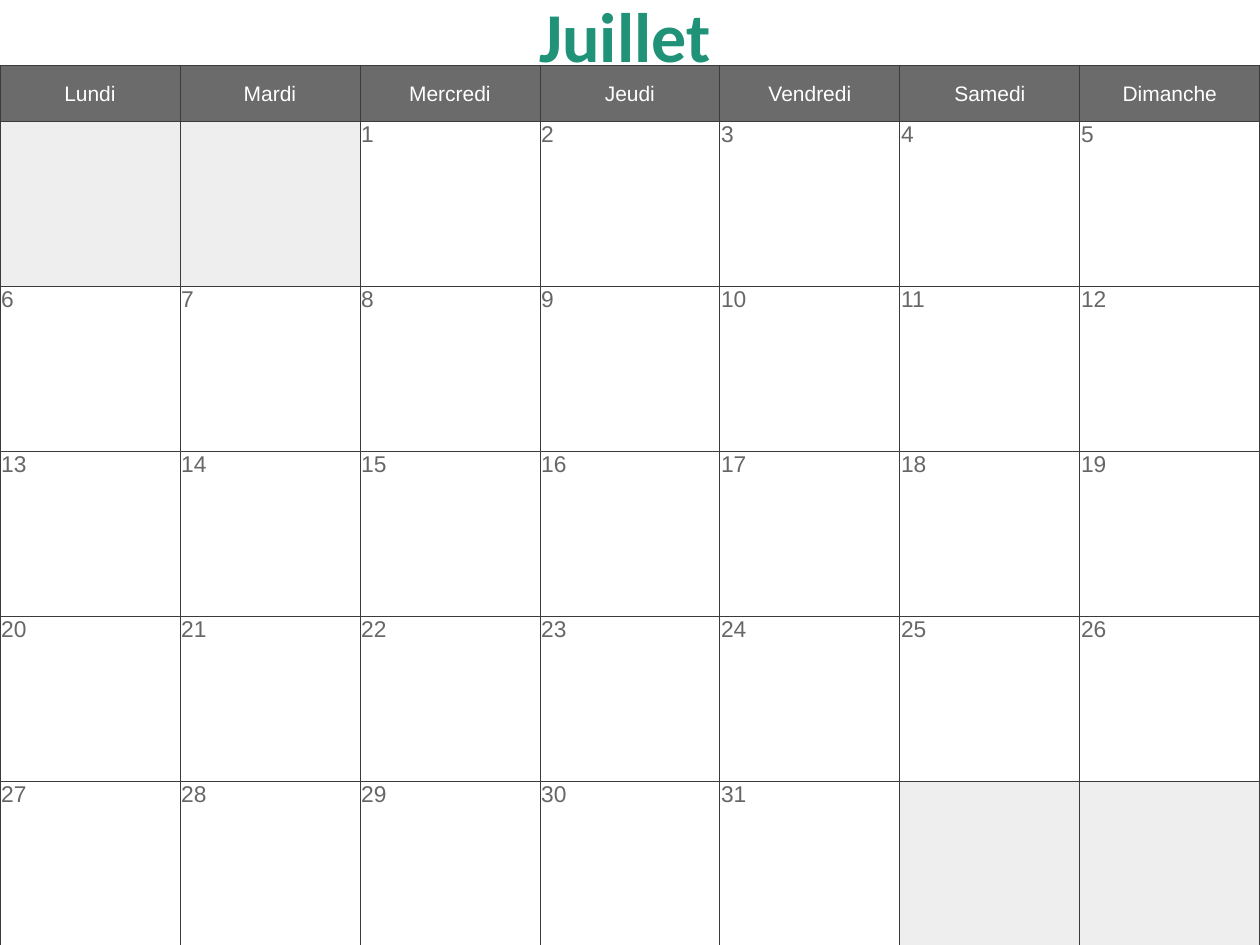
from lxml import etree
from pptx import Presentation
from pptx.dml.color import RGBColor
from pptx.enum.text import MSO_ANCHOR, MSO_AUTO_SIZE, PP_ALIGN
from pptx.oxml.ns import qn
from pptx.util import Inches, Pt

LEFT, CENTER = PP_ALIGN.LEFT, PP_ALIGN.CENTER
TOP, MIDDLE = MSO_ANCHOR.TOP, MSO_ANCHOR.MIDDLE
NO_AUTO_SIZE = MSO_AUTO_SIZE.NONE
TITLE_ONLY = 5

MONTH = "Juillet"
WEEKDAYS = ["Lundi", "Mardi", "Mercredi", "Jeudi", "Vendredi", "Samedi", "Dimanche"]
WEEKS = 5
FIRST_COLUMN = 2  # the month starts on a Wednesday
DAYS = 31

GREEN, WHITE = "209277", "FFFFFF"
HEADER_GREY, DAY_GREY, EMPTY_GREY, BORDER_GREY = "6B6B6B", "676767", "EEEEEE", "3B3B3B"

SLIDE_WIDTH = 10
TABLE_TOP = 0.52
HEADER_HEIGHT, WEEK_HEIGHT = 0.44, 1.31


def color(hex_value):
    return RGBColor.from_string(hex_value)


def write_text(text_frame, text, font="Arial", size=13, fill=DAY_GREY,
               bold=False, align=LEFT):
    paragraph = text_frame.paragraphs[0]
    paragraph.alignment = align
    run = paragraph.add_run()
    run.text = text
    run.font.name = font
    run.font.size = Pt(size)
    run.font.bold = bold
    run.font.color.rgb = color(fill)


def set_borders(cell, hex_value, width):
    properties = cell._tc.get_or_add_tcPr()
    for side in ("a:lnL", "a:lnR", "a:lnT", "a:lnB"):
        line = etree.SubElement(properties, qn(side), w=str(Pt(width)))
        solid = etree.SubElement(line, qn("a:solidFill"))
        etree.SubElement(solid, qn("a:srgbClr"), val=hex_value)


def format_cell(cell, fill, anchor=TOP):
    cell.margin_left = cell.margin_right = cell.margin_top = Inches(0.01)
    cell.margin_bottom = 0
    cell.vertical_anchor = anchor
    set_borders(cell, BORDER_GREY, 0.5)
    cell.fill.solid()
    cell.fill.fore_color.rgb = color(fill)


def add_title(slide):
    title = slide.shapes.title
    title.left, title.top = Inches(4.17), Inches(-0.11)
    title.width, title.height = Inches(1.58), Inches(0.77)
    text_frame = title.text_frame
    text_frame.word_wrap = False
    text_frame.auto_size = NO_AUTO_SIZE
    text_frame.vertical_anchor = TOP
    write_text(text_frame, MONTH, font="Calibri", size=40, fill=GREEN,
               bold=True, align=CENTER)


def add_calendar(slide):
    table = slide.shapes.add_table(
        WEEKS + 1, len(WEEKDAYS), 0, Inches(TABLE_TOP), Inches(SLIDE_WIDTH),
        Inches(HEADER_HEIGHT + WEEKS * WEEK_HEIGHT)).table
    table.horz_banding = False
    for column in table.columns:
        column.width = Inches(SLIDE_WIDTH / len(WEEKDAYS))
    for index, row in enumerate(table.rows):
        row.height = Inches(WEEK_HEIGHT if index else HEADER_HEIGHT)

    # Weekday names
    for column, weekday in enumerate(WEEKDAYS):
        cell = table.cell(0, column)
        format_cell(cell, HEADER_GREY, anchor=MIDDLE)
        write_text(cell.text_frame, weekday, size=12, fill=WHITE, align=CENTER)

    # Days, with grey cells outside the month
    for position in range(WEEKS * len(WEEKDAYS)):
        week, column = divmod(position, len(WEEKDAYS))
        day = position - FIRST_COLUMN + 1
        in_month = 1 <= day <= DAYS
        cell = table.cell(week + 1, column)
        format_cell(cell, WHITE if in_month else EMPTY_GREY)
        if in_month:
            write_text(cell.text_frame, str(day))


def main():
    presentation = Presentation()
    presentation.slide_width = Inches(SLIDE_WIDTH)
    presentation.slide_height = Inches(7.5)
    slide = presentation.slides.add_slide(presentation.slide_layouts[TITLE_ONLY])
    add_calendar(slide)
    add_title(slide)
    presentation.save("out.pptx")


if __name__ == "__main__":
    main()
